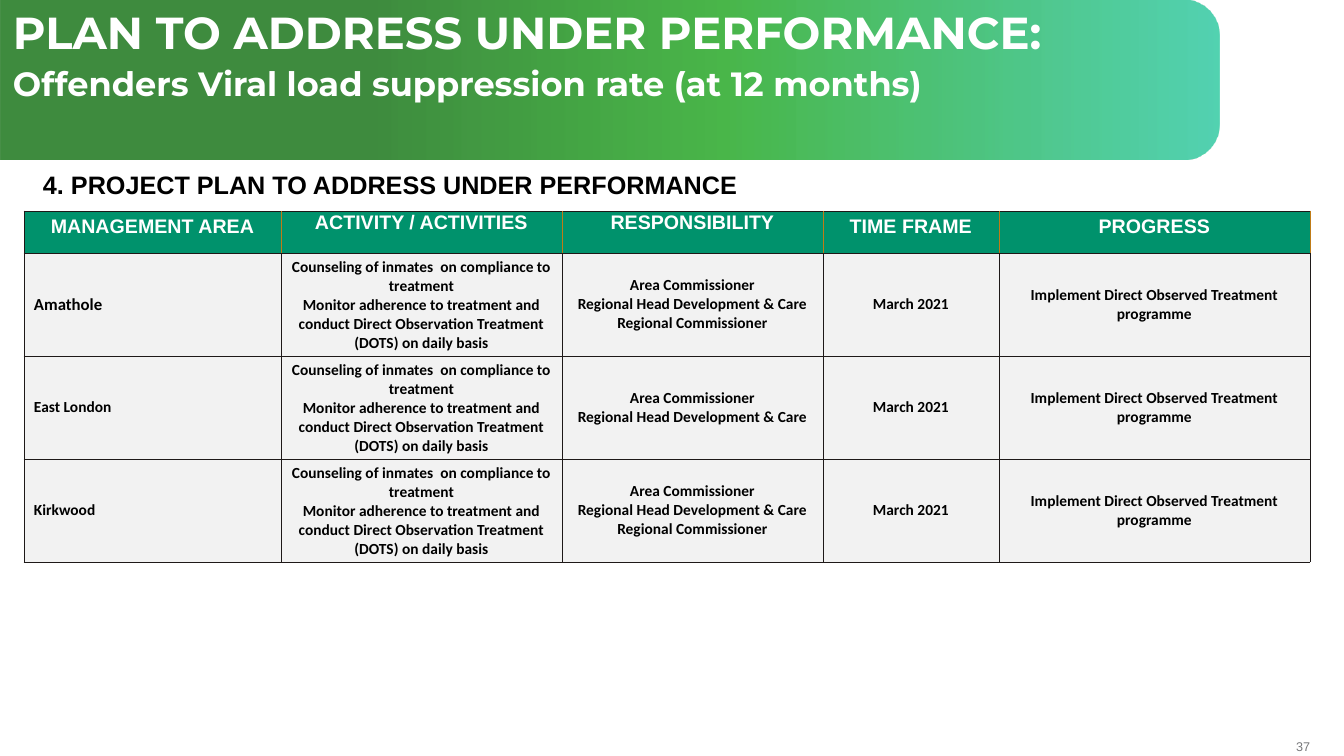
from lxml.etree import SubElement
from pptx import Presentation
from pptx.dml.color import RGBColor
from pptx.enum.shapes import MSO_SHAPE as Preset
from pptx.enum.text import MSO_ANCHOR as Anchor, PP_ALIGN as Align
from pptx.oxml import parse_xml
from pptx.oxml.ns import nsdecls, qn
from pptx.util import Emu, Pt

BLACK = RGBColor(0x00, 0x00, 0x00)
WHITE = RGBColor(0xFF, 0xFF, 0xFF)
GREY = RGBColor(0x77, 0x78, 0x7B)
HEADER_GREEN = RGBColor(0x00, 0x92, 0x6C)
ROW_GREY = RGBColor(0xF2, 0xF2, 0xF2)
INK = RGBColor(0x1E, 0x19, 0x18)
ORANGE = RGBColor(0xBF, 0x7B, 0x17)
BANNER_STOPS = [
    (30, RGBColor(0x00, 0x66, 0x00), 75),
    (59, RGBColor(0x00, 0x99, 0x00), 71),
    (100, RGBColor(0x00, 0xBC, 0x8D), 67),
]

HEADERS = ["MANAGEMENT AREA", "ACTIVITY / ACTIVITIES", "RESPONSIBILITY", "TIME FRAME", "PROGRESS"]
TIGHT_HEADERS = HEADERS[1:3]
COLUMN_WIDTHS = [257, 281, 261, 176, 311]
ACTIVITIES = [
    "Counseling of inmates  on compliance to treatment",
    "Monitor adherence to treatment and conduct Direct Observation Treatment (DOTS) on daily basis",
]
OFFICIALS = ["Area Commissioner", "Regional Head Development & Care", "Regional Commissioner"]
AREAS = [("Amathole", 12, OFFICIALS), ("East London", 11, OFFICIALS[:2]), ("Kirkwood", 11, OFFICIALS)]


def px(count):
    return Emu(round(count * 914400 / 100.8))


class SlideBuilder:
    """Draws styled elements on one slide, with lengths in px."""

    def __init__(self, width, height):
        self.presentation = Presentation()
        self.presentation.slide_width = px(width)
        self.presentation.slide_height = px(height)
        self.slide = self.presentation.slides.add_slide(self.presentation.slide_layouts[6])

    def fill_text(self, frame, lines, size, font="Arial", color=BLACK, bold=True, align=Align.LEFT):
        frame.text = "\n".join(lines)
        frame.word_wrap = True
        for paragraph in frame.paragraphs:
            paragraph.alignment = align
            paragraph.font.name = font
            paragraph.font.size = Pt(size)
            paragraph.font.bold = bold
            paragraph.font.color.rgb = color

    def text(self, left, top, width, height, lines, size, margins=(10, 5, 10, 5), **style):
        frame = self.slide.shapes.add_textbox(px(left), px(top), px(width), px(height)).text_frame
        self.set_margins(frame, margins)
        self.fill_text(frame, lines, size, **style)
        return frame

    def set_margins(self, holder, margins):
        holder.margin_left, holder.margin_top, holder.margin_right, holder.margin_bottom = map(px, margins)

    def banner(self, left, top, width, height, stops):
        shape = self.slide.shapes.add_shape(
            Preset.ROUND_2_SAME_RECTANGLE,
            px(left + (width - height) / 2), px(top + (height - width) / 2), px(height), px(width),
        )
        shape.rotation = 90
        shape.adjustments[0] = 0.23
        shape.adjustments[1] = 0
        shape.shadow.inherit = False
        shape.line.fill.background()
        stop_xml = "".join(
            f'<a:gs pos="{position * 1000}"><a:srgbClr val="{color}">'
            f'<a:alpha val="{alpha * 1000}"/></a:srgbClr></a:gs>'
            for position, color, alpha in stops
        )
        gradient = parse_xml(
            f'<a:gradFill {nsdecls("a")} rotWithShape="1"><a:gsLst>{stop_xml}</a:gsLst>'
            '<a:lin ang="16200000" scaled="0"/></a:gradFill>'
        )
        shape._element.spPr.find(qn("a:prstGeom")).addnext(gradient)

    def table(self, left, top, widths, heights):
        table = self.slide.shapes.add_table(
            len(heights), len(widths), px(left), px(top), px(sum(widths)), px(sum(heights))
        ).table
        for column, width in zip(table.columns, widths):
            column.width = px(width)
        for row, height in zip(table.rows, heights):
            row.height = px(height)
        return table

    def cell(self, cell, lines, size, fill, margins=(10, 5, 10, 5), anchor=Anchor.MIDDLE,
             left_border=INK, right_border=INK, **style):
        self.set_margins(cell, margins)
        cell.vertical_anchor = anchor
        self.fill_text(cell.text_frame, lines, size, **style)
        properties = cell._tc.get_or_add_tcPr()
        for side, color in zip("LRTB", (left_border, right_border, INK, INK)):
            line = SubElement(properties, qn(f"a:ln{side}"), w=str(Pt(0.5)))
            SubElement(SubElement(line, qn("a:solidFill")), qn("a:srgbClr"), val=str(color))
        cell.fill.solid()
        cell.fill.fore_color.rgb = fill


def main():
    builder = SlideBuilder(1344, 756)
    builder.text(1271, 739, 39, 15, ["37"], 9, margins=(0, 0, 0, 0), color=GREY, bold=False,
                 align=Align.RIGHT)
    builder.banner(1, 0, 1218, 159, BANNER_STOPS)
    builder.text(-2, 164, 1008, 40, ["4. PROJECT PLAN TO ADDRESS UNDER PERFORMANCE"], 18,
                 margins=(45, 5, 10, 5))

    table = builder.table(24, 211, COLUMN_WIDTHS, [42] + [103] * len(AREAS))
    for index, header in enumerate(HEADERS):
        margins = (1, 1, 1, 0) if header in TIGHT_HEADERS else (10, 5, 10, 5)
        builder.cell(table.cell(0, index), [header], 14, HEADER_GREEN, margins, Anchor.TOP,
                     left_border=ORANGE if index else INK, right_border=ORANGE,
                     color=WHITE, align=Align.CENTER)
    for row, (area, area_size, officials) in enumerate(AREAS, 1):
        builder.cell(table.cell(row, 0), [area], area_size, ROW_GREY, font="Calibri")
        details = [ACTIVITIES, officials, ["March 2021"], ["Implement Direct Observed Treatment programme"]]
        for column, lines in enumerate(details, 1):
            builder.cell(table.cell(row, column), lines, 11, ROW_GREY, font="Calibri", align=Align.CENTER)

    title = builder.text(
        3, 6, 1208, 57,
        ["PLAN TO ADDRESS UNDER PERFORMANCE:", "Offenders Viral load suppression rate (at 12 months)"],
        32, font="Montserrat", color=WHITE,
    )
    title.paragraphs[1].font.size = Pt(24)
    for paragraph in title.paragraphs:
        paragraph.line_spacing = 0.9
        paragraph.space_after = Pt(6)

    builder.presentation.save("out.pptx")


if __name__ == "__main__":
    main()
